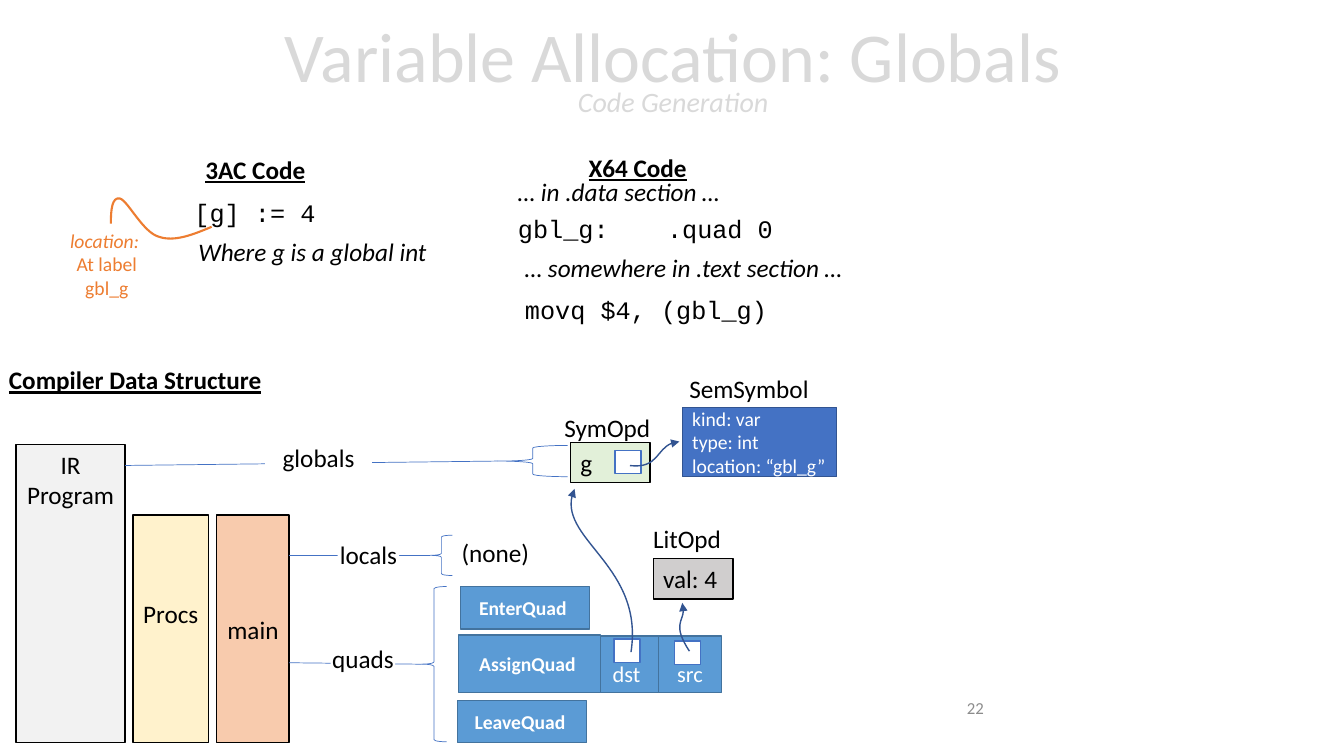
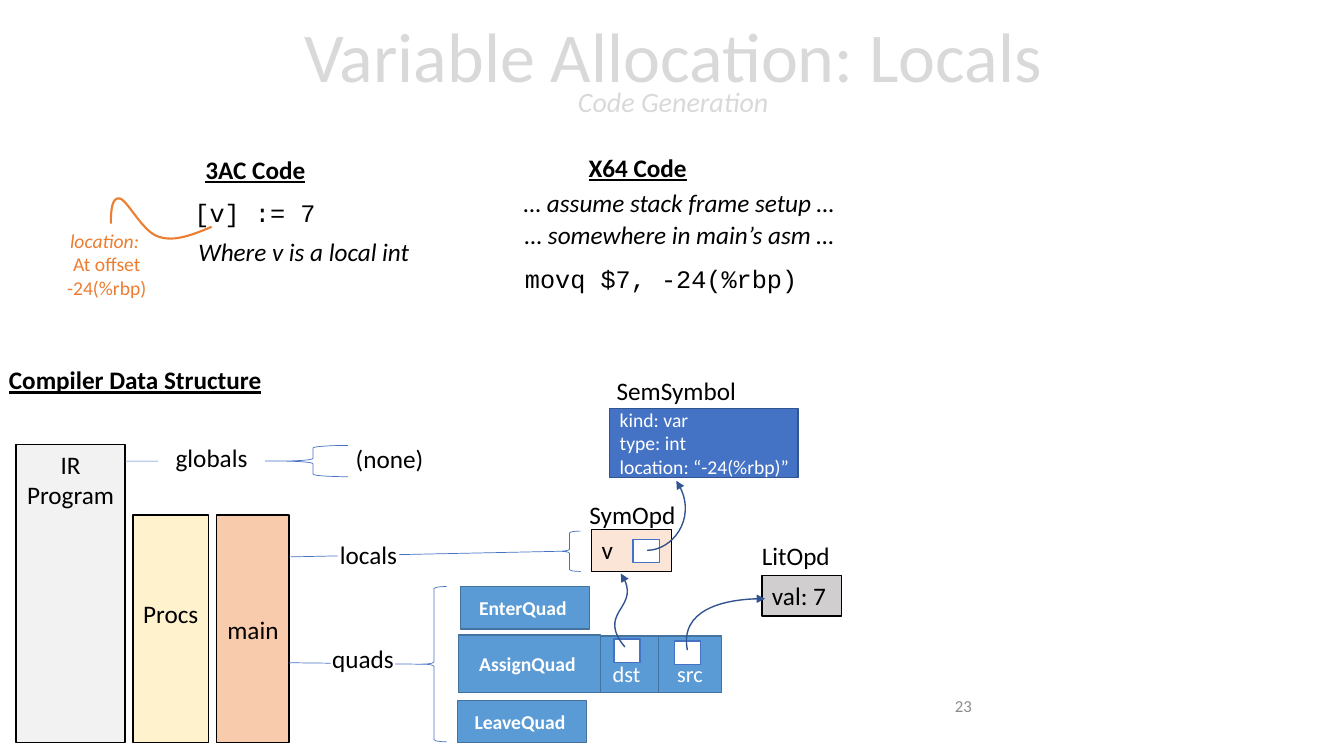
from typing import NamedTuple

from lxml import etree
from pptx import Presentation
from pptx.dml.color import RGBColor
from pptx.enum import shapes, text
from pptx.oxml.ns import qn
from pptx.util import Pt

# Shared look
BLACK = RGBColor(0x00, 0x00, 0x00)
WHITE = RGBColor(0xFF, 0xFF, 0xFF)
TITLE_GRAY = RGBColor(0xD9, 0xD9, 0xD9)
NUMBER_GRAY = RGBColor(0x8C, 0x8C, 0x8C)
ORANGE = RGBColor(0xED, 0x7D, 0x31)
BLUE = RGBColor(0x44, 0x72, 0xC4)
DARK_BLUE = RGBColor(0x32, 0x54, 0x91)
QUAD_FILL = RGBColor(0x5B, 0x9B, 0xD5)
QUAD_EDGE = RGBColor(0x43, 0x73, 0x9E)
PROGRAM_FILL = RGBColor(0xF2, 0xF2, 0xF2)
PROCS_FILL = RGBColor(0xFF, 0xF2, 0xCC)
MAIN_FILL = RGBColor(0xF8, 0xCB, 0xAD)
GLOBAL_FILL = RGBColor(0xE2, 0xF0, 0xD9)
LOCAL_FILL = RGBColor(0xFB, 0xE5, 0xD6)
LITERAL_FILL = RGBColor(0xD0, 0xCE, 0xCE)

LEFT, CENTER, RIGHT = text.PP_ALIGN.LEFT, text.PP_ALIGN.CENTER, text.PP_ALIGN.RIGHT
TOP, MIDDLE, BOTTOM = (text.MSO_ANCHOR.TOP, text.MSO_ANCHOR.MIDDLE,
                       text.MSO_ANCHOR.BOTTOM)
RECT, BRACE = shapes.MSO_SHAPE.RECTANGLE, shapes.MSO_SHAPE.LEFT_BRACE

Point = tuple[float, float]
LINE_H = 29
PROGRAM_RIGHT, MAIN_RIGHT = 89.3, 206.6


class Style(NamedTuple):
    size: float = 18
    color: RGBColor = BLACK
    align: text.PP_ALIGN = LEFT
    bold: bool = False
    italic: bool = False
    underline: bool = False
    name: str = "Calibri"


class Box(NamedTuple):
    x: float
    y: float
    w: float
    h: float = LINE_H


class Note(NamedTuple):
    text: str
    box: Box
    style: Style


class Panel(NamedTuple):
    text: str
    box: Box
    fill: RGBColor
    edge: RGBColor | None
    style: Style
    anchor: text.MSO_ANCHOR = MIDDLE
    insets: tuple[float, float, float, float] = (7.2, 3.6, 7.2, 3.6)


class Branch(NamedTuple):
    label: str
    label_box: Box
    start: Point
    brace: Box


class Lesson(NamedTuple):
    title: str
    number: str
    number_at: Point
    notes: list[Note]
    location: str
    branches: list[Branch]
    none_at: Point
    variable: str
    variable_box: Box
    variable_fill: RGBColor
    symopd_at: Point
    pointer_at: Point
    symbol_box: Box
    symbol_location: str
    symbol_label_at: Point
    literal: str
    literal_at: Point
    arrows: list[list[Point]]


BODY = Style()
BODY_CENTER = Style(align=CENTER)
ASIDE = Style(italic=True)
CODE = Style(name="Courier New")
HEADING = Style(bold=True, underline=True)
QUAD = Style(14, WHITE, CENTER, bold=True)
OPERAND = Style(16, WHITE, CENTER)
SYMBOL = Style(14, WHITE)
PLACE = Style(14, ORANGE, CENTER)
NUMBER = Style(12, NUMBER_GRAY, RIGHT)
TITLE = Style(50, TITLE_GRAY, CENTER)


# Drawing helpers
def set_font(p, style: Style) -> None:
    p.alignment = style.align
    f = p.font
    f.name, f.size, f.color.rgb = style.name, Pt(style.size), style.color
    f.bold, f.italic, f.underline = style.bold, style.italic, style.underline


def write(tf, content: str, style: Style) -> None:
    for i, line in enumerate(content.split("\n")):
        p = tf.paragraphs[0] if i == 0 else tf.add_paragraph()
        p.add_run().text = line
        set_font(p, style)


def add_textbox(slide, box: Box):
    return slide.shapes.add_textbox(*map(Pt, box)).text_frame


def add_note(slide, note: Note):
    tf = add_textbox(slide, note.box)
    tf.word_wrap = False
    tf.auto_size = text.MSO_AUTO_SIZE.SHAPE_TO_FIT_TEXT
    write(tf, note.text, note.style)
    return tf


def add_panel(slide, panel: Panel) -> None:
    sp = slide.shapes.add_shape(RECT, *map(Pt, panel.box))
    sp.shadow.inherit = False
    sp.fill.solid()
    sp.fill.fore_color.rgb = panel.fill
    if panel.edge is None:
        sp.line.fill.background()
    else:
        sp.line.color.rgb = panel.edge
        sp.line.width = Pt(1)
    tf = sp.text_frame
    tf.vertical_anchor = panel.anchor
    tf.margin_left, tf.margin_top, tf.margin_right, tf.margin_bottom = map(Pt, panel.insets)
    if panel.text:
        write(tf, panel.text, panel.style)


def add_curve(slide, points: list[Point], color: RGBColor, width: float,
              arrow: bool = False) -> None:
    """Draw cubic curves: a start, then two controls and an end for each."""
    (x, y), *rest = [(Pt(px), Pt(py)) for px, py in points]
    builder = slide.shapes.build_freeform(x, y)
    builder.add_line_segments(rest, close=False)
    sp = builder.convert_to_shape()
    sp.shadow.inherit = False
    sp.fill.background()
    sp.line.color.rgb = color
    sp.line.width = Pt(width)
    segments = list(sp._element.iter(qn("a:lnTo")))
    for i in range(0, len(segments), 3):
        curve = etree.Element(qn("a:cubicBezTo"))
        segments[i].addprevious(curve)
        for segment in segments[i:i + 3]:
            curve.append(segment[0])
            segment.getparent().remove(segment)
    if arrow:
        ln = sp.line._get_or_add_ln()
        etree.SubElement(ln, qn("a:tailEnd"), type="triangle")


def add_branch(slide, branch: Branch) -> None:
    brace = slide.shapes.add_shape(BRACE, *map(Pt, branch.brace))
    brace.shadow.inherit = False
    brace.fill.background()
    x, y = map(Pt, branch.start)
    line = slide.shapes.add_connector(shapes.MSO_CONNECTOR.STRAIGHT, x, y, x, y)
    line.end_connect(brace, 1)
    for sp in (brace, line):
        sp.line.color.rgb = BLUE
        sp.line.width = Pt(0.5)
    etree.SubElement(line._element.spPr, qn("a:effectLst"))
    add_panel(slide, Panel(branch.label, branch.label_box, WHITE, None,
                           BODY_CENTER, TOP, (0, 0, 0, 0)))


def add_pointer(slide, at: Point) -> None:
    add_panel(slide, Panel("", Box(*at, 18.7, 16.6), WHITE, BLUE, BODY))


# Parts found on both slides
FIXED_NOTES = [
    Note("3AC Code", Box(139.7, 106.6, 85.7), HEADING),
    Note("X64 Code", Box(413.3, 105.1, 85), HEADING),
    Note("Compiler Data Structure", Box(-0.7, 257, 196.6), HEADING),
]
FIXED_PANELS = [
    Panel("IR\nProgram", Box(11.5, 317.5, 77.8, 213.1), PROGRAM_FILL, BLACK, BODY_CENTER, TOP),
    Panel("Procs", Box(95, 367.9, 54, 162.7), PROCS_FILL, BLACK, BODY_CENTER,
          insets=(7.2, 3.6, 7.2, 25.6)),
    Panel("main", Box(154.8, 367.9, 51.8, 162.7), MAIN_FILL, BLACK, BODY_CENTER),
    Panel("dst", Box(424.8, 454.3, 45.4, 40.3), QUAD_FILL, QUAD_EDGE, OPERAND, BOTTOM),
    Panel("src", Box(470.2, 454.3, 45.4, 40.3), QUAD_FILL, QUAD_EDGE, OPERAND, BOTTOM),
    Panel("EnterQuad ", Box(329, 419, 92.2, 30.2), QUAD_FILL, QUAD_EDGE, QUAD),
    Panel("AssignQuad ", Box(327.6, 453.6, 101.5, 41), QUAD_FILL, QUAD_EDGE, QUAD),
    Panel("LeaveQuad ", Box(326.9, 500.4, 92.2, 30.2), QUAD_FILL, QUAD_EDGE, QUAD),
]
OPERAND_POINTERS = [(438.5, 456.5), (481.7, 457.9)]
QUADS = Branch("quads", Box(236.2, 459.4, 46.1, 30.2), (MAIN_RIGHT, 473.4),
               Box(301, 419, 18, 110.9))
LOCALS_LABEL = Box(241.2, 385.2, 43.9, 30.2)
LOCATION_CURVE = [(79.2, 159.8), (79.2, 150.5), (79.9, 140.4), (85.7, 141.8),
                  (91.4, 143.3), (102.2, 166.3), (113.8, 169.2),
                  (124.6, 172.8), (137.5, 167.8), (151.2, 162)]

LESSONS = [
    Lesson(
        "Variable Allocation: Globals", "22", (547.9, 491),
        [Note("[g] := 4", Box(131.8, 137.5, 101.5), CODE),
         Note("Where g is a global int", Box(134.6, 164.9, 179.3), ASIDE),
         Note("… in .data section …", Box(362.9, 122.4, 160.6), ASIDE),
         Note("gbl_g:", Box(362.9, 149, 90.7), CODE),
         Note(".quad 0", Box(469.4, 149, 90.7), CODE),
         Note("… somewhere in .text section …", Box(367.9, 176.4, 244), ASIDE),
         Note("movq $4, (gbl_g)", Box(367.9, 206.6, 187.9), CODE)],
        "At label\ngbl_g",
        [Branch("globals", Box(189.4, 316.1, 76.3, 30.2), (PROGRAM_RIGHT, 332.5),
                Box(355.7, 318.2, 49.7, 22.3)),
         Branch("locals", LOCALS_LABEL, (MAIN_RIGHT, 396.7), Box(307.4, 382.3, 15.8, 28.8)),
         QUADS],
        (322.6, 380.2), "g", Box(407.5, 316.1, 56.9, 28.8), GLOBAL_FILL,
        (396, 290.9), (439.2, 321.8),
        Box(487.4, 290.9, 110.2, 49.7), "“gbl_g”", (485.3, 262.8),
        "val: 4", (466.6, 398.9),
        [[(450.7, 465.8), (460.1, 405.4), (394.6, 383.8), (410.4, 349.2)],
         [(450, 332.6), (470.2, 334.8), (468.7, 316.8), (485.3, 315.4)],
         [(492.5, 465.1), (480.2, 446.4), (491, 442.1), (487.4, 430.6)]]),
    Lesson(
        "Variable Allocation: Locals", "23", (539.3, 489.6),
        [Note("[v] := 7", Box(131.8, 137.5, 101.5), CODE),
         Note("Where v is a local int", Box(134.6, 164.9, 167), ASIDE),
         Note("… assume stack frame setup …", Box(367.2, 130.3, 244.8), ASIDE),
         Note("… somewhere in main’s asm …", Box(367.9, 153.4, 237.6), ASIDE),
         Note("movq $7, -24(%rbp)", Box(367.9, 184.3, 210.2), CODE)],
        "At offset\n-24(%rbp)",
        [Branch("globals", Box(113, 316.1, 76.3, 30.2), (PROGRAM_RIGHT, 329.4),
                Box(198.7, 318.2, 49.7, 22.3)),
         Branch("locals", LOCALS_LABEL, (MAIN_RIGHT, 397.8), Box(398.9, 379.4, 15.8, 28.8)),
         QUADS],
        (247, 313.2), "v", Box(422.6, 378, 56.9, 30.2), LOCAL_FILL,
        (414, 352.8), (452.2, 385.2),
        Box(435.6, 291.6, 134.6, 49.7), "“-24(%rbp)”", (433.4, 264.2),
        "val: 7", (544.3, 411.1),
        [[(446.4, 462.2), (426.2, 437.8), (460.1, 434.2), (443.5, 409.7)],
         [(462.2, 393.1), (480.2, 393.1), (499.7, 367.9), (483.1, 343.4)],
         [(491, 464.4), (485.3, 435.6), (521.3, 427), (546.5, 427.7)]]),
]


def add_title(slide, title: str) -> None:
    tf = add_textbox(slide, Box(1.4, 2.2, 959, 104.4))
    tf.word_wrap = True
    tf.vertical_anchor = MIDDLE
    write(tf, title, TITLE)
    p = tf.paragraphs[0]
    p.line_spacing = 0.7
    p.add_line_break()
    r = p.add_run()
    r.text = "Code Generation"
    r.font.size, r.font.italic = Pt(20), True


def add_lesson(prs, lesson: Lesson) -> None:
    slide = prs.slides.add_slide(prs.slide_layouts[6])
    add_title(slide, lesson.title)

    # Code and headings
    for note in FIXED_NOTES + lesson.notes:
        add_note(slide, note)
    add_curve(slide, LOCATION_CURVE, ORANGE, 1.5)
    tf = add_note(slide, Note("location: \n" + lesson.location,
                              Box(40.3, 159.8, 72, 58.3), PLACE))
    tf.paragraphs[0].font.italic = True

    # Program structure
    for panel in FIXED_PANELS:
        add_panel(slide, panel)
    for branch in lesson.branches:
        add_branch(slide, branch)
    add_note(slide, Note("(none)", Box(*lesson.none_at, 63.4), BODY))

    # Symbol and literal operands
    add_panel(slide, Panel(lesson.variable, lesson.variable_box, lesson.variable_fill,
                           BLACK, BODY, TOP))
    add_note(slide, Note("SymOpd", Box(*lesson.symopd_at, 76.3), BODY))
    add_panel(slide, Panel("kind: var\ntype: int\nlocation: " + lesson.symbol_location,
                           lesson.symbol_box, BLUE, DARK_BLUE, SYMBOL, insets=(7.2, 0, 0, 0)))
    add_note(slide, Note("SemSymbol", Box(*lesson.symbol_label_at, 100.8), BODY))
    x, y = lesson.literal_at
    add_panel(slide, Panel(lesson.literal, Box(x, y, 56.9), LITERAL_FILL, BLACK, BODY, TOP))
    add_note(slide, Note("LitOpd", Box(x - 7.2, y - LINE_H, 63.4), BODY))

    # Pointers and their arrows
    for at in [*OPERAND_POINTERS, lesson.pointer_at]:
        add_pointer(slide, at)
    for points in lesson.arrows:
        add_curve(slide, points, DARK_BLUE, 1, arrow=True)

    # Slide number
    tf = add_textbox(slide, Box(*lesson.number_at, 162))
    tf.word_wrap = True
    tf.vertical_anchor = MIDDLE
    write(tf, lesson.number, NUMBER)


def main() -> None:
    prs = Presentation()
    prs.slide_width, prs.slide_height = Pt(960), Pt(540)
    for lesson in LESSONS:
        add_lesson(prs, lesson)
    prs.save("out.pptx")


if __name__ == "__main__":
    main()
